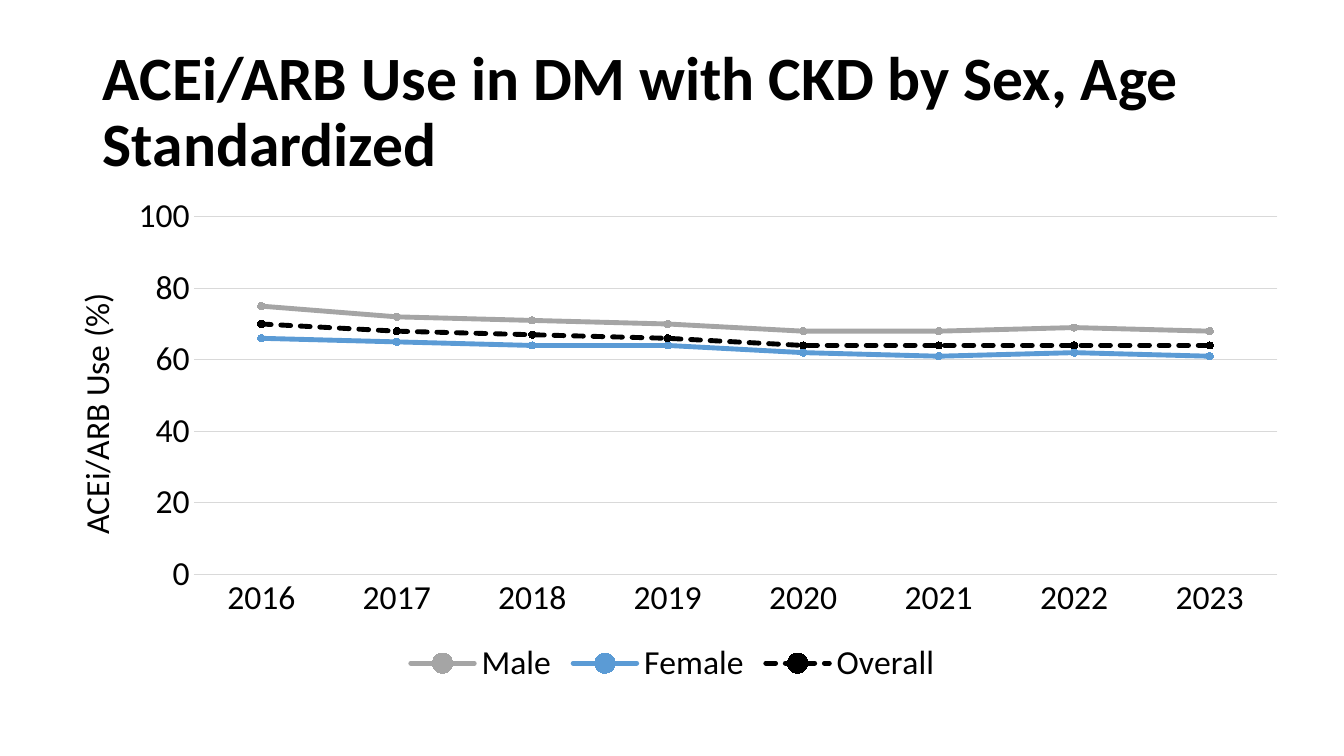
from dataclasses import dataclass

from lxml import etree
from pptx import Presentation
from pptx.chart.chart import Chart
from pptx.chart.data import CategoryChartData
from pptx.dml.color import RGBColor
from pptx.enum.chart import XL_CHART_TYPE, XL_LEGEND_POSITION, XL_MARKER_STYLE, XL_TICK_MARK
from pptx.enum.dml import MSO_LINE
from pptx.enum.text import MSO_ANCHOR, MSO_AUTO_SIZE, PP_ALIGN
from pptx.oxml.ns import qn
from pptx.slide import Slide
from pptx.text.text import Font
from pptx.util import Emu, Pt

LINES = XL_CHART_TYPE.LINE_MARKERS
BOTTOM = XL_LEGEND_POSITION.BOTTOM
CIRCLE = XL_MARKER_STYLE.CIRCLE
NO_TICK = XL_TICK_MARK.NONE
DASH = MSO_LINE.SQUARE_DOT
MIDDLE = MSO_ANCHOR.MIDDLE
LEFT = PP_ALIGN.LEFT
NO_FIT = MSO_AUTO_SIZE.NONE

SCALE = 9144
FACE = "Calibri"
BLACK = "000000"
GRID = "D9D9D9"
YEARS = [str(year) for year in range(2016, 2024)]


@dataclass(frozen=True)
class Trend:
    name: str
    rates: tuple[int, ...]
    color: str
    dashed: bool = False


TRENDS = (
    Trend("Male", (75, 72, 71, 70, 68, 68, 69, 68), "A5A5A5"),
    Trend("Female", (66, 65, 64, 64, 62, 61, 62, 61), "5B9BD5"),
    Trend("Overall", (70, 68, 67, 66, 64, 64, 64, 64), BLACK, True),
)


def px(count: int) -> Emu:
    return Emu(count * SCALE)


def paint(color: str) -> RGBColor:
    return RGBColor.from_string(color)


def style(font: Font, size: int, bold: bool = False) -> None:
    font.name = FACE
    font.size = Pt(size)
    font.bold = bold
    font.color.rgb = paint(BLACK)


def place(parent: etree._Element, index: int, **spots: float) -> None:
    """Give a chart part a manual layout in fractions of the chart."""
    for old in parent.findall(qn("c:layout")):
        parent.remove(old)
    layout = etree.Element(qn("c:layout"))
    parent.insert(index, layout)
    manual = etree.SubElement(layout, qn("c:manualLayout"))
    if "w" in spots:
        etree.SubElement(manual, qn("c:layoutTarget")).set("val", "inner")
    for key in ("x", "y"):
        etree.SubElement(manual, qn(f"c:{key}Mode")).set("val", "edge")
    for key, share in spots.items():
        etree.SubElement(manual, qn(f"c:{key}")).set("val", str(share))


def add_title(slide: Slide, text: str) -> None:
    title = slide.shapes.title
    title.left, title.top, title.width, title.height = map(px, (92, 40, 1150, 145))
    frame = title.text_frame
    frame.auto_size = NO_FIT
    frame.word_wrap = True
    frame.vertical_anchor = MIDDLE
    para = frame.paragraphs[0]
    para.alignment = LEFT
    para.line_spacing = 0.9
    run = para.add_run()
    run.text = text
    style(run.font, 44, True)


def set_axes(chart: Chart) -> None:
    years, rates = chart.category_axis, chart.value_axis
    for axis in (years, rates):
        axis.major_tick_mark = axis.minor_tick_mark = NO_TICK
        style(axis.tick_labels.font, 24)
    years.has_major_gridlines = False
    rates.has_major_gridlines = True
    for rule in (years.format.line, rates.major_gridlines.format.line):
        rule.color.rgb = paint(GRID)
        rule.width = Pt(0.75)
    rates.format.line.fill.background()
    rates.minimum_scale, rates.maximum_scale, rates.major_unit = 0, 100, 20
    rates.tick_labels.number_format = "0"
    rates.tick_labels.number_format_is_linked = False
    label = rates.axis_title
    run = label.text_frame.paragraphs[0].add_run()
    run.text = "ACEi/ARB Use (%)"
    style(run.font, 24)
    body = label.element.find(f".//{qn('a:bodyPr')}")
    body.set("rot", "-5400000")
    body.set("vert", "horz")
    place(label.element, 1, x=0.02, y=0.2)


def draw_trends(chart: Chart) -> None:
    for series, trend in zip(chart.plots[0].series, TRENDS):
        series.smooth = False
        line = series.format.line
        line.color.rgb = paint(trend.color)
        line.width = Pt(3.5)
        if trend.dashed:
            line.dash_style = DASH
        mark = series.marker
        mark.style, mark.size = CIRCLE, 5
        mark.format.fill.solid()
        mark.format.fill.fore_color.rgb = paint(trend.color)
        mark.format.line.color.rgb = paint(trend.color)
    for node in chart.element.iter(qn("c:ser")):
        node.find(f"{qn('c:spPr')}/{qn('a:ln')}").set("cap", "rnd")


def add_trends(slide: Slide) -> None:
    data = CategoryChartData(number_format="0")
    data.categories = YEARS
    for trend in TRENDS:
        data.add_series(trend.name, trend.rates)
    box = map(px, (42, 185, 1250, 500))
    chart = slide.shapes.add_chart(LINES, *box, data).chart
    style(chart.font, 24)
    chart.has_title = False
    chart.plots[0].vary_by_categories = False
    chart.has_legend = True
    chart.legend.position = BOTTOM
    chart.legend.include_in_layout = False
    style(chart.legend.font, 24)
    set_axes(chart)
    draw_trends(chart)
    area = chart.element.find(f".//{qn('c:plotArea')}")
    place(area, 0, x=0.12, y=0.06, w=0.86, h=0.71)


def main() -> None:
    deck = Presentation()
    deck.slide_width, deck.slide_height = px(1333), px(750)
    slide = deck.slides.add_slide(deck.slide_layouts[5])
    add_title(slide, "ACEi/ARB Use in DM with CKD by Sex, Age Standardized")
    add_trends(slide)
    deck.save("out.pptx")


if __name__ == "__main__":
    main()
